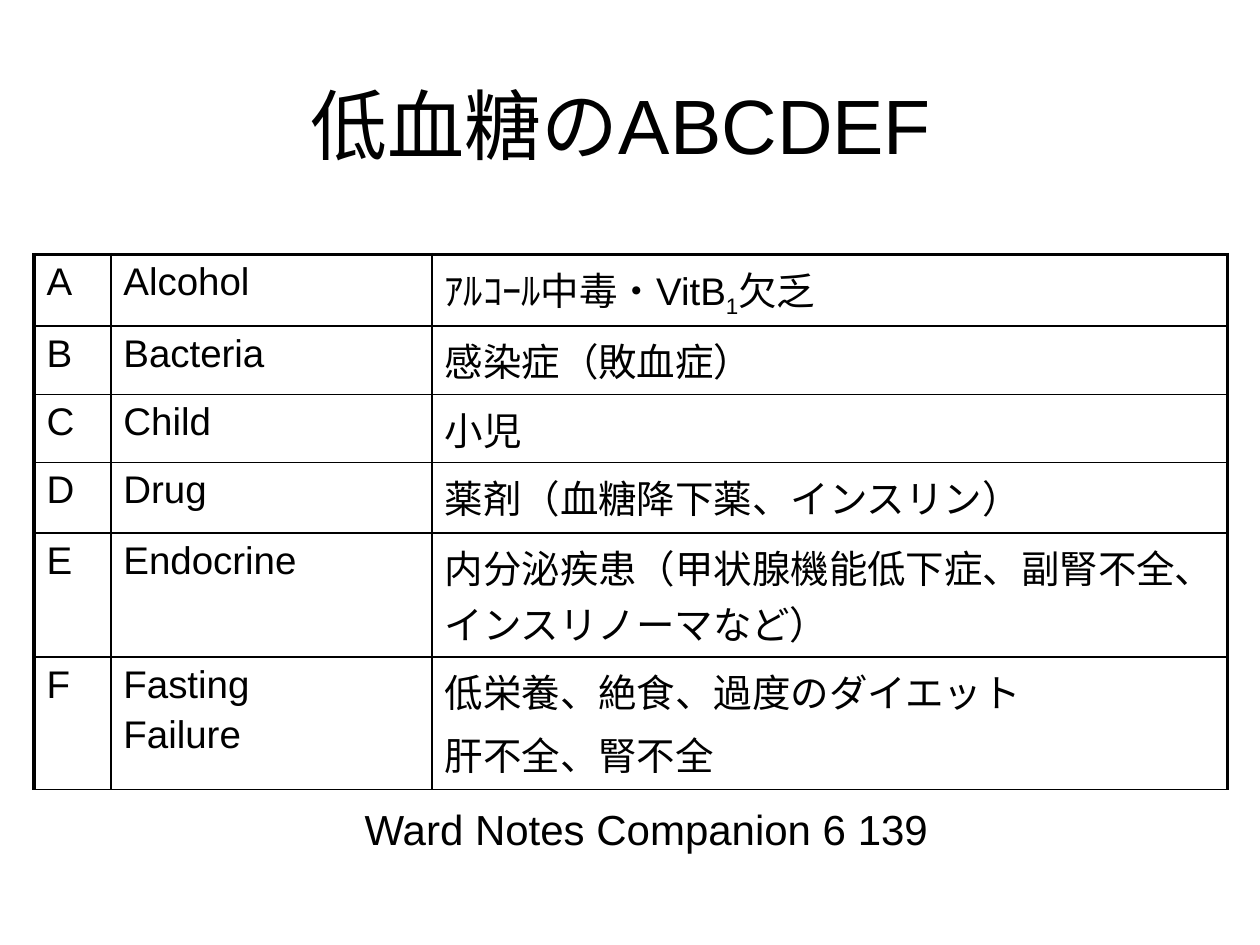
import dataclasses

import pptx
import pptx.dml.color
import pptx.enum.text
import pptx.oxml
import pptx.oxml.ns
import pptx.shapes.base
import pptx.slide
import pptx.table
import pptx.text.text
import pptx.util
from pptx.util import Inches, Pt


@dataclasses.dataclass(frozen=True)
class Theme:
    font: str = "Arial"
    ink: str = "000000"
    title_size: float = 44
    table_size: float = 22
    caption_size: float = 24
    space_before: float = 4
    thin_border: float = 1
    thick_border: float = 2.25


@dataclasses.dataclass(frozen=True)
class Cause:
    letter: str
    english: tuple[str, ...]
    japanese: tuple[str, ...]
    height: float


THEME = Theme()
COLUMN_WIDTHS = (0.61, 2.55, 6.31)
SUBSCRIPT_MARK = "_"
CAUSES = (
    Cause("A", ("Alcohol",), ("ｱﾙｺｰﾙ中毒・VitB_1_欠乏",), 0.56),
    Cause("B", ("Bacteria",), ("感染症（敗血症）",), 0.54),
    Cause("C", ("Child",), ("小児",), 0.54),
    Cause("D", ("Drug",), ("薬剤（血糖降下薬、インスリン）",), 0.56),
    Cause("E", ("Endocrine",),
          ("内分泌疾患（甲状腺機能低下症、副腎不全、インスリノーマなど）",), 0.98),
    Cause("F", ("Fasting", "Failure"),
          ("低栄養、絶食、過度のダイエット", "肝不全、腎不全"), 1.05),
)


def format_paragraph(para: pptx.text.text._Paragraph, size: float) -> None:
    para.font.name = THEME.font
    para.font.size = Pt(size)
    para.font.color.rgb = pptx.dml.color.RGBColor.from_string(THEME.ink)


def write_centred(box: pptx.shapes.base.BaseShape, text: str, size: float) -> None:
    frame = box.text_frame
    frame.word_wrap = True
    frame.vertical_anchor = pptx.enum.text.MSO_ANCHOR.MIDDLE
    frame.text = text
    para = frame.paragraphs[0]
    para.alignment = pptx.enum.text.PP_ALIGN.CENTER
    format_paragraph(para, size)


def write_cell(cell: pptx.table._Cell, lines: tuple[str, ...]) -> None:
    """Write one paragraph per line; text between subscript marks is lowered."""
    frame = cell.text_frame
    for index, line in enumerate(lines):
        para = frame.add_paragraph() if index else frame.paragraphs[0]
        para.space_before = Pt(THEME.space_before)
        format_paragraph(para, THEME.table_size)
        for part, text in enumerate(line.split(SUBSCRIPT_MARK)):
            span = para.add_run()
            span.text = text
            if part % 2:
                span.font._element.set("baseline", "-25000")


def set_borders(cell: pptx.table._Cell, thick_sides: set[str]) -> None:
    properties = cell._tc.get_or_add_tcPr()
    namespace = pptx.oxml.ns.nsdecls("a")
    for position, side in enumerate("LRTB"):
        points = THEME.thick_border if side in thick_sides else THEME.thin_border
        border = pptx.oxml.parse_xml(
            f'<a:ln{side} {namespace} w="{Pt(points)}"><a:solidFill>'
            f'<a:srgbClr val="{THEME.ink}"/></a:solidFill></a:ln{side}>')
        properties.insert(position, border)


def add_cause_table(page: pptx.slide.Slide) -> None:
    table = page.shapes.add_table(
        len(CAUSES), len(COLUMN_WIDTHS), Inches(0.27), Inches(2.02),
        Inches(sum(COLUMN_WIDTHS)),
        Inches(sum(cause.height for cause in CAUSES))).table
    table.first_row = table.horz_banding = False
    for column, width in zip(table.columns, COLUMN_WIDTHS):
        column.width = Inches(width)
    last_column = len(COLUMN_WIDTHS) - 1
    for row, cause in enumerate(CAUSES):
        table.rows[row].height = Inches(cause.height)
        for column, lines in enumerate(((cause.letter,), cause.english, cause.japanese)):
            cell = table.cell(row, column)
            cell.fill.background()
            write_cell(cell, lines)
            outer = {"T": row == 0, "L": column == 0, "R": column == last_column}
            set_borders(cell, {side for side, is_outer in outer.items() if is_outer})


def main() -> None:
    deck = pptx.Presentation()
    deck.slide_width, deck.slide_height = Inches(10), Inches(7.5)
    page = deck.slides.add_slide(deck.slide_layouts.get_by_name("Title Only"))

    title = page.shapes.title
    title.left, title.top = Inches(0.43), Inches(0.36)
    title.width, title.height = Inches(9), Inches(1.25)
    write_centred(title, "低血糖のABCDEF", THEME.title_size)

    add_cause_table(page)

    caption = page.shapes.add_textbox(Inches(0.63), Inches(5.95), Inches(9), Inches(1.25))
    write_centred(caption, "Ward Notes Companion 6 139", THEME.caption_size)

    deck.save("out.pptx")


if __name__ == "__main__":
    main()
